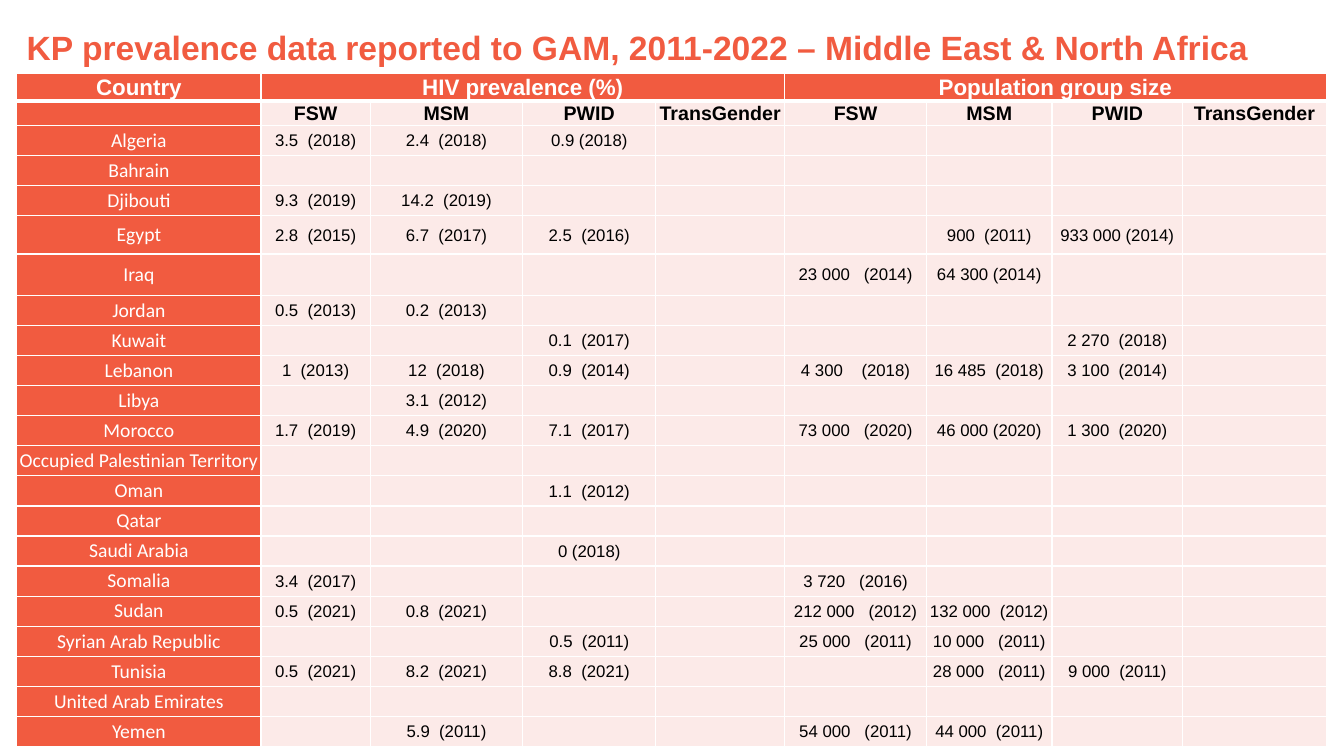
import lxml.etree
import pptx
import pptx.dml.color
import pptx.enum.text
import pptx.oxml.ns
import pptx.util

EMU_PER_PX = 914400 // 144
ORANGE, PINK, WHITE, BLACK = "F15B40", "FCEAE8", "FFFFFF", "000000"

GROUPS = ["FSW", "MSM", "PWID", "TransGender"]
COLUMN_WIDTHS = [349, 156, 218, 190, 184, 203, 179, 187, 205]
HEADER_HEIGHTS = [39, 34]
ROW_HEIGHT = 43
TALL_ROWS = {"Egypt": 55, "Iraq": 59}

# Per country: prevalence for the four groups, then size for the four groups
COUNTRIES = {
    "Algeria": ["3.5  (2018)", "2.4  (2018)", "0.9 (2018)"],
    "Bahrain": [],
    "Djibouti": ["9.3  (2019)", "14.2  (2019)"],
    "Egypt": ["2.8  (2015)", "6.7  (2017)", "2.5  (2016)", "",
              "", "900  (2011)", "933 000 (2014)"],
    "Iraq": ["", "", "", "", "23 000   (2014)", "64 300 (2014)"],
    "Jordan": ["0.5  (2013)", "0.2  (2013)"],
    "Kuwait": ["", "", "0.1  (2017)", "", "", "", "2 270  (2018)"],
    "Lebanon": ["1  (2013)", "12  (2018)", "0.9  (2014)", "",
                "4 300    (2018)", "16 485  (2018)", "3 100  (2014)"],
    "Libya": ["", "3.1  (2012)"],
    "Morocco": ["1.7  (2019)", "4.9  (2020)", "7.1  (2017)", "",
                "73 000   (2020)", "46 000 (2020)", "1 300  (2020)"],
    "Occupied Palestinian Territory": [],
    "Oman": ["", "", "1.1  (2012)"],
    "Qatar": [],
    "Saudi Arabia": ["", "", "0 (2018)"],
    "Somalia": ["3.4  (2017)", "", "", "", "3 720   (2016)"],
    "Sudan": ["0.5  (2021)", "0.8  (2021)", "", "",
              "212 000   (2012)", "132 000  (2012)"],
    "Syrian Arab Republic": ["", "", "0.5  (2011)", "",
                             "25 000   (2011)", "10 000   (2011)"],
    "Tunisia": ["0.5  (2021)", "8.2  (2021)", "8.8  (2021)", "",
                "", "28 000   (2011)", "9 000  (2011)"],
    "United Arab Emirates": [],
    "Yemen": ["", "5.9  (2011)", "", "", "54 000   (2011)", "44 000  (2011)"],
}


def px(length):
    return pptx.util.Emu(length * EMU_PER_PX)


def color(hex_string):
    return pptx.dml.color.RGBColor.from_string(hex_string)


class SlideBuilder:
    def __init__(self, slide):
        self.slide = slide

    def format_text(self, paragraph, size, text_color, bold=False, font="Arial"):
        for run in paragraph.runs:
            run.font.name = font
            run.font.size = pptx.util.Pt(size)
            run.font.bold = bold
            run.font.color.rgb = color(text_color)

    def text(self, left, top, width, height, content, size, text_color, bold):
        shape = self.slide.shapes.add_textbox(px(left), px(top), px(width), px(height))
        shape.text_frame.word_wrap = True
        shape.text_frame.text = content
        self.format_text(shape.text_frame.paragraphs[0], size, text_color, bold)

    def table(self, left, top, widths, heights):
        shape = self.slide.shapes.add_table(
            len(heights), len(widths), px(left), px(top), px(sum(widths)), px(sum(heights)))
        table = shape.table
        table.first_row = table.horz_banding = False
        for column, width in zip(table.columns, widths):
            column.width = px(width)
        for row, height in zip(table.rows, heights):
            row.height = px(height)
        return table

    def borders(self, cell, bottom):
        properties = cell._tc.get_or_add_tcPr()
        for side, width in (("L", 1), ("R", 1), ("T", 1), ("B", bottom)):
            line = lxml.etree.SubElement(
                properties, pptx.oxml.ns.qn(f"a:ln{side}"), w=str(pptx.util.Pt(width)))
            fill = lxml.etree.SubElement(line, pptx.oxml.ns.qn("a:solidFill"))
            lxml.etree.SubElement(fill, pptx.oxml.ns.qn("a:srgbClr"), val=WHITE)

    def cell(self, cell, content, fill, size, text_color, bold=False,
             font="Arial", margin=1, space_after=2, bottom=1):
        self.borders(cell, bottom)
        cell.fill.solid()
        cell.fill.fore_color.rgb = color(fill)
        cell.margin_left = cell.margin_right = cell.margin_top = px(margin)
        cell.margin_bottom = 0
        cell.vertical_anchor = pptx.enum.text.MSO_ANCHOR.MIDDLE
        paragraph = cell.text_frame.paragraphs[0]
        if not content:
            # Keeps an empty cell from stretching its row
            lxml.etree.SubElement(
                paragraph._p, pptx.oxml.ns.qn("a:endParaRPr"), sz=str(size * 100))
            return
        paragraph.text = content
        paragraph.alignment = pptx.enum.text.PP_ALIGN.CENTER
        paragraph.space_after = pptx.util.Pt(space_after)
        self.format_text(paragraph, size, text_color, bold, font)


def main():
    presentation = pptx.Presentation()
    presentation.slide_width, presentation.slide_height = px(1920), px(1080)
    builder = SlideBuilder(presentation.slides.add_slide(presentation.slide_layouts[6]))

    # Title
    builder.text(24, 32, 1846, 72,
                 "KP prevalence data reported to GAM, 2011-2022 – Middle East & North Africa",
                 24, ORANGE, True)

    # Table grid
    heights = HEADER_HEIGHTS + [TALL_ROWS.get(name, ROW_HEIGHT) for name in COUNTRIES]
    table = builder.table(24, 105, COLUMN_WIDTHS, heights)

    # Header rows
    headings = {0: "Country", 1: "HIV prevalence (%)", 5: "Population group size"}
    for column in range(len(COLUMN_WIDTHS)):
        builder.cell(table.cell(0, column), headings.get(column, ""), ORANGE, 16, WHITE,
                     bold=True, bottom=3)
    for first in (1, 5):
        table.cell(0, first).merge(table.cell(0, first + 3))
    builder.cell(table.cell(1, 0), "", ORANGE, 14, WHITE)
    for column, group in enumerate(GROUPS * 2, 1):
        builder.cell(table.cell(1, column), group, PINK, 14, BLACK, bold=True)

    # Country rows
    for row, (country, values) in enumerate(COUNTRIES.items(), 2):
        builder.cell(table.cell(row, 0), country, ORANGE, 14, WHITE,
                     font="Calibri", margin=0, space_after=0)
        for column in range(1, len(COLUMN_WIDTHS)):
            value = values[column - 1] if column <= len(values) else ""
            builder.cell(table.cell(row, column), value, PINK, 12, BLACK)

    presentation.save("out.pptx")


if __name__ == "__main__":
    main()
